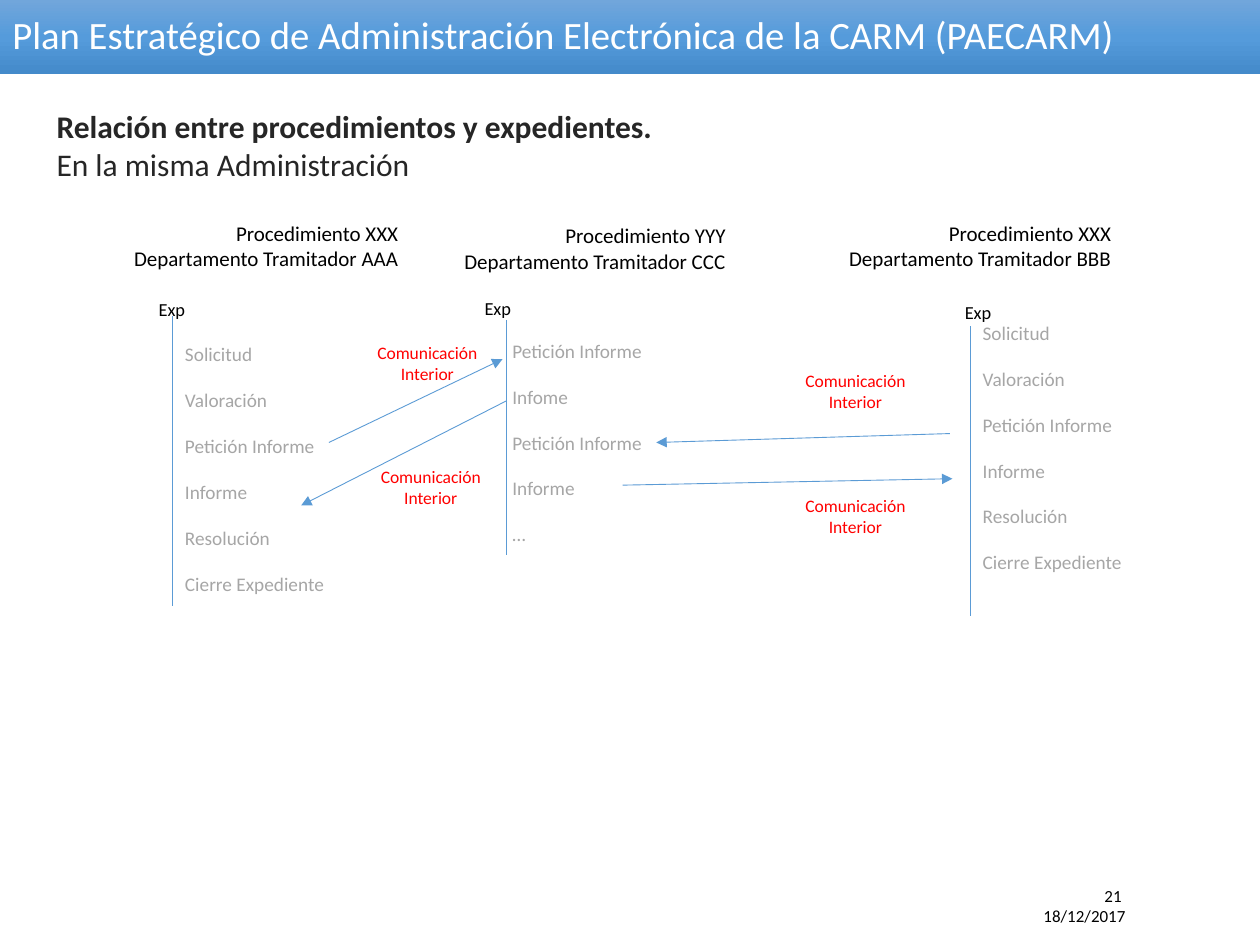
from copy import deepcopy
from dataclasses import dataclass

from lxml.etree import SubElement
from pptx import Presentation
from pptx.dml.color import RGBColor as Rgb
from pptx.enum.shapes import MSO_CONNECTOR as Connector, MSO_SHAPE as Shape
from pptx.enum.text import MSO_ANCHOR as Anchor, MSO_AUTO_SIZE as AutoSize, PP_ALIGN as Align
from pptx.oxml.ns import qn
from pptx.util import Cm, Pt


@dataclass(frozen=True)
class Theme:
    """Colours, type sizes and line weight of the slide."""
    font: str = "Calibri"
    banner: tuple = ((0, "71A6DB"), (0.5, "559BDB"), (1, "448ACA"))
    white: str = "FFFFFF"
    black: str = "000000"
    heading: str = "262626"
    step: str = "A6A6A6"
    alert: str = "FF0000"
    line: str = "5B9BD5"
    line_width: float = 0.5
    title_size: float = 22.1
    heading_size: float = 18
    lane_size: float = 12
    step_size: float = 11
    file_size: float = 10.5
    alert_size: float = 10
    footer_size: float = 9.7


def write_text(frame, text, *, font, size, color, align=Align.LEFT,
               bold_first=False, gap=0, spacing=None):
    """Write each line of text as a paragraph with the given format."""
    for index, line in enumerate(text.split("\n")):
        paragraph = frame.add_paragraph() if index else frame.paragraphs[0]
        paragraph.alignment = align
        paragraph.line_spacing = spacing
        if index and gap:
            paragraph.space_before = Pt(gap)
        run = paragraph.add_run()
        run.text = line
        run.font.name = font
        run.font.size = Pt(size)
        run.font.bold = bold_first and index == 0
        run.font.color.rgb = Rgb.from_string(color)


class SlideBuilder:
    """Draw styled elements on the current slide."""

    def __init__(self, slide, theme):
        """Keep the slide and its theme."""
        self.slide = slide
        self.theme = theme

    def banner(self, text, width, height):
        """Draw the title on a gradient band."""
        band = self.slide.shapes.add_shape(Shape.RECTANGLE, 0, 0, Cm(width), Cm(height))
        band.shadow.inherit = False
        band.line.fill.background()
        band.fill.gradient()
        band.fill.gradient_angle = 270
        stops = band.element.spPr.find(qn("a:gradFill")).find(qn("a:gsLst"))
        stops.append(deepcopy(stops[-1]))
        for stop, (position, color) in zip(band.fill.gradient_stops, self.theme.banner):
            stop.position = position
            stop.color.rgb = Rgb.from_string(color)
        band.text_frame.word_wrap = True
        band.text_frame.vertical_anchor = Anchor.MIDDLE
        write_text(band.text_frame, text, font=self.theme.font, size=self.theme.title_size,
                   color=self.theme.white, spacing=0.9)

    def text(self, text, left, top, width, height, wrap=False, **style):
        """Place a text box."""
        box = self.slide.shapes.add_textbox(Cm(left), Cm(top), Cm(width), Cm(height))
        box.text_frame.word_wrap = wrap
        box.text_frame.auto_size = AutoSize.SHAPE_TO_FIT_TEXT
        write_text(box.text_frame, text, font=self.theme.font, **style)

    def line(self, start, end, arrow=False):
        """Draw a straight line, with an arrowhead at its end if asked."""
        connector = self.slide.shapes.add_connector(
            Connector.STRAIGHT, *map(Cm, start), *map(Cm, end))
        connector.line.color.rgb = Rgb.from_string(self.theme.line)
        connector.line.width = Pt(self.theme.line_width)
        properties = connector.element.spPr
        if arrow:
            SubElement(properties.find(qn("a:ln")), qn("a:tailEnd"), type="triangle")
        SubElement(properties, qn("a:effectLst"))

    def lane(self, name, name_at, file_at, axis, steps, steps_at):
        """Draw one procedure with its file, time line and steps."""
        theme = self.theme
        self.text(name, *name_at, 1.27, wrap=True, size=theme.lane_size,
                  color=theme.black, align=Align.RIGHT)
        x, top, bottom = axis
        self.line((x, top), (x, bottom))
        self.text("\n".join(steps), *steps_at, size=theme.step_size,
                  color=theme.step, gap=13)
        self.text("Exp", *file_at, 1.14, 0.71, size=theme.file_size, color=theme.black)

    def message(self, start, end, label_at):
        """Draw an arrow between two procedures and its label."""
        self.line(start, end, arrow=True)
        self.text("Comunicación\nInterior", *label_at, 2.59, 1.12, size=self.theme.alert_size,
                  color=self.theme.alert, align=Align.CENTER)


def main():
    """Build the slide and save it."""
    deck = Presentation()
    deck.slide_width, deck.slide_height = Cm(25.4), Cm(19.05)
    theme = Theme()
    page = SlideBuilder(deck.slides.add_slide(deck.slide_layouts[6]), theme)

    page.banner("Plan Estratégico de Administración Electrónica de la CARM (PAECARM)", 25.4, 1.5)
    page.text("Relación entre procedimientos y expedientes.\nEn la misma Administración",
              0.89, 2.03, 12.75, 1.8, size=theme.heading_size, color=theme.heading,
              bold_first=True)

    full_steps = ("Solicitud", "Valoración", "Petición Informe", "Informe",
                  "Resolución", "Cierre Expediente")
    report_steps = ("Petición Informe", "Infome", "Petición Informe", "Informe", "…")
    lanes = (
        ("Procedimiento XXX\nDepartamento Tramitador AAA", (2.29, 4.32, 5.99), (2.95, 5.89),
         (3.48, 6.38, 12.22), full_steps, (3.48, 6.78, 3.35, 6.38)),
        ("Procedimiento YYY\nDepartamento Tramitador CCC", (9.04, 4.37, 5.84), (9.52, 5.87),
         (10.21, 6.45, 11.18), report_steps, (10.08, 6.71, 3.15, 4.5)),
        ("Procedimiento XXX\nDepartamento Tramitador BBB", (16.81, 4.32, 5.84), (19.2, 5.94),
         (19.56, 6.58, 12.42), full_steps, (19.56, 6.35, 3.35, 6.38)),
    )
    for lane in lanes:
        page.lane(*lane)

    messages = (
        ((6.63, 8.92), (10.13, 7.24), (7.32, 6.76)),
        ((10.21, 8.08), (6.07, 10.19), (7.39, 9.27)),
        ((19.15, 8.74), (13.23, 8.92), (15.95, 7.34)),
        ((12.55, 9.78), (19.2, 9.65), (15.95, 9.86)),
    )
    for message in messages:
        page.message(*message)

    page.text("21 \n18/12/2017", 18.11, 17.73, 4.83, 1.09, wrap=True,
              size=theme.footer_size, color=theme.black, align=Align.RIGHT)
    deck.save("out.pptx")


if __name__ == "__main__":
    main()
